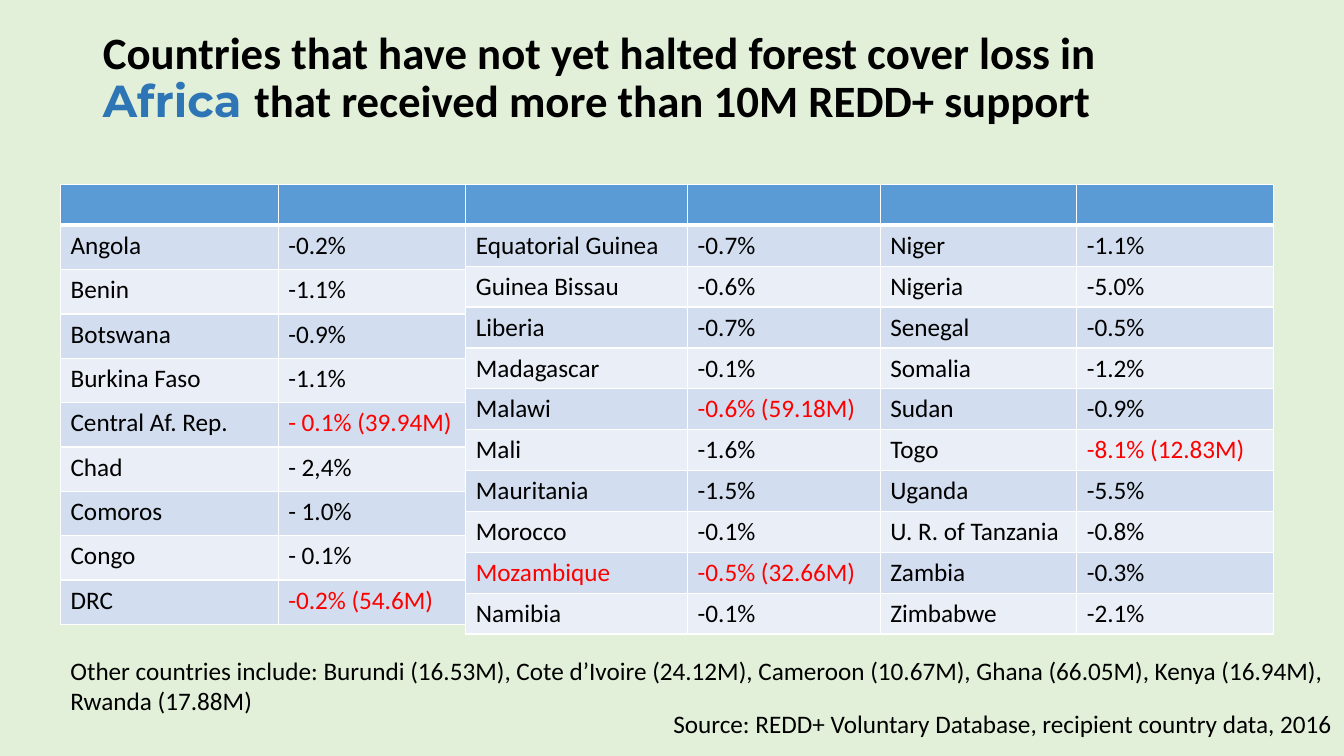
from dataclasses import dataclass

from lxml import etree
from pptx import Presentation
from pptx.dml.color import RGBColor
from pptx.enum.text import MSO_ANCHOR, MSO_AUTO_SIZE, PP_ALIGN
from pptx.oxml.ns import qn
from pptx.slide import Slide
from pptx.table import _Cell
from pptx.text.text import TextFrame, _Paragraph
from pptx.util import Inches, Pt

MIDDLE = MSO_ANCHOR.MIDDLE
LEFT = PP_ALIGN.LEFT
FIXED_SIZE = MSO_AUTO_SIZE.NONE
GROW_SHAPE = MSO_AUTO_SIZE.SHAPE_TO_FIT_TEXT


@dataclass(frozen=True)
class Theme:
    font: str = "Calibri"
    accent_font: str = "Montserrat"
    title_size: int = 32
    body_size: int = 18
    background: str = "E2F0D9"
    text: str = "000000"
    accent: str = "2E75B6"
    alert: str = "FF0000"
    header: str = "5B9BD5"
    bands: tuple[str, str] = ("D2DEEF", "EAEFF7")
    border: str = "FFFFFF"
    border_width: float = 1
    header_border_width: float = 3


@dataclass(frozen=True)
class Box:
    left: float
    top: float
    width: float
    height: float


@dataclass(frozen=True)
class CountryTable:
    left: float
    columns: tuple[float, ...]
    row_height: float
    rows: tuple[tuple[str, ...], ...]


@dataclass(frozen=True)
class Note:
    box: Box
    lines: tuple[str, ...]
    wrap: bool


THEME = Theme()
TABLE_TOP = 1.83
HEADER_HEIGHT = 0.4
TITLE_BOX = Box(0.92, 0.4, 11.5, 0.77)
TITLE_RUNS = (
    ("Countries that have not yet halted forest cover loss in ", THEME.font, THEME.text),
    ("Africa ", THEME.accent_font, THEME.accent),
    ("that received more than 10M REDD+ support", THEME.font, THEME.text),
)
ALERT_COUNTRIES = {"Mozambique"}

TABLES = (
    CountryTable(0.6, (2.16, 3.54), 0.44, (
        ("Angola", "-0.2%"),
        ("Benin", "-1.1%"),
        ("Botswana", "-0.9%"),
        ("Burkina Faso", "-1.1%"),
        ("Central Af. Rep.", "- 0.1% (39.94M)"),
        ("Chad", "- 2,4%"),
        ("Comoros", "- 1.0%"),
        ("Congo", "- 0.1%"),
        ("DRC", "-0.2% (54.6M)"),
    )),
    CountryTable(4.62, (2.2, 1.91, 1.95, 1.95), 0.4, (
        ("Equatorial Guinea", "-0.7%", "Niger", "-1.1%"),
        ("Guinea Bissau", "-0.6%", "Nigeria", "-5.0%"),
        ("Liberia", "-0.7%", "Senegal", "-0.5%"),
        ("Madagascar", "-0.1%", "Somalia", "-1.2%"),
        ("Malawi", "-0.6% (59.18M)", "Sudan", "-0.9%"),
        ("Mali", "-1.6%", "Togo", "-8.1% (12.83M)"),
        ("Mauritania", "-1.5%", "Uganda", "-5.5%"),
        ("Morocco", "-0.1%", "U. R. of Tanzania", "-0.8%"),
        ("Mozambique", "-0.5% (32.66M)", "Zambia", "-0.3%"),
        ("Namibia", "-0.1%", "Zimbabwe", "-2.1%"),
    )),
)

NOTES = (
    Note(Box(0.6, 6.45, 12.78, 0.71), (
        "Other countries include: Burundi (16.53M), Cote d’Ivoire (24.12M), "
        "Cameroon (10.67M), Ghana (66.05M), Kenya (16.94M),",
        "Rwanda (17.88M)",
    ), False),
    Note(Box(6.58, 6.98, 6.75, 0.4), (
        "Source: REDD+ Voluntary Database, recipient country data, 2016",
    ), True),
)


def inches(box: Box) -> tuple[Inches, Inches, Inches, Inches]:
    return Inches(box.left), Inches(box.top), Inches(box.width), Inches(box.height)


def add_run(paragraph: _Paragraph, text: str, color: str = THEME.text,
            size: int = THEME.body_size, font: str = THEME.font, bold: bool = False) -> None:
    run = paragraph.add_run()
    run.text = text
    run.font.name = font
    run.font.size = Pt(size)
    run.font.bold = bold
    run.font.color.rgb = RGBColor.from_string(color)


def add_lines(frame: TextFrame, lines: tuple[str, ...]) -> None:
    for index, line in enumerate(lines):
        paragraph = frame.add_paragraph() if index else frame.paragraphs[0]
        paragraph.alignment = LEFT
        add_run(paragraph, line)


def set_title(slide: Slide) -> None:
    title = slide.shapes.title
    title.left, title.top, title.width, title.height = inches(TITLE_BOX)
    frame = title.text_frame
    frame.word_wrap = True
    frame.auto_size = FIXED_SIZE
    frame.vertical_anchor = MIDDLE
    paragraph = frame.paragraphs[0]
    paragraph.alignment = LEFT
    paragraph.line_spacing = 0.9
    for text, font, color in TITLE_RUNS:
        add_run(paragraph, text, color, THEME.title_size, font, True)


def set_borders(cell: _Cell, row: int) -> None:
    properties = cell._tc.get_or_add_tcPr()
    heavy_side = {0: "lnB", 1: "lnT"}.get(row)
    for side in ("lnL", "lnR", "lnT", "lnB"):
        width = THEME.header_border_width if side == heavy_side else THEME.border_width
        line = etree.SubElement(properties, qn(f"a:{side}"), w=str(Pt(width)))
        fill = etree.SubElement(line, qn("a:solidFill"))
        etree.SubElement(fill, qn("a:srgbClr"), val=THEME.border)


def format_cell(cell: _Cell, row: int) -> None:
    set_borders(cell, row)
    color = THEME.bands[(row - 1) % 2] if row else THEME.header
    cell.fill.solid()
    cell.fill.fore_color.rgb = RGBColor.from_string(color)


def add_country_table(slide: Slide, content: CountryTable) -> None:
    height = HEADER_HEIGHT + content.row_height * len(content.rows)
    box = Box(content.left, TABLE_TOP, sum(content.columns), height)
    row_count, column_count = len(content.rows) + 1, len(content.columns)
    table = slide.shapes.add_table(row_count, column_count, *inches(box)).table
    for column, width in zip(table.columns, content.columns):
        column.width = Inches(width)
    for index, row in enumerate(table.rows):
        row.height = Inches(content.row_height if index else HEADER_HEIGHT)
        for cell in row.cells:
            format_cell(cell, index)
    for row, texts in enumerate(content.rows, 1):
        for column, text in enumerate(texts):
            alert = "(" in text or text in ALERT_COUNTRIES
            paragraph = table.cell(row, column).text_frame.paragraphs[0]
            add_run(paragraph, text, THEME.alert if alert else THEME.text)


def add_note(slide: Slide, note: Note) -> None:
    frame = slide.shapes.add_textbox(*inches(note.box)).text_frame
    frame.word_wrap = note.wrap
    frame.auto_size = GROW_SHAPE
    add_lines(frame, note.lines)


def main() -> None:
    presentation = Presentation()
    presentation.slide_width = Inches(13.33)
    presentation.slide_height = Inches(7.5)
    slide = presentation.slides.add_slide(presentation.slide_layouts[5])
    slide.background.fill.solid()
    slide.background.fill.fore_color.rgb = RGBColor.from_string(THEME.background)
    set_title(slide)
    for content in TABLES:
        add_country_table(slide, content)
    for note in NOTES:
        add_note(slide, note)
    presentation.save("out.pptx")


if __name__ == "__main__":
    main()
